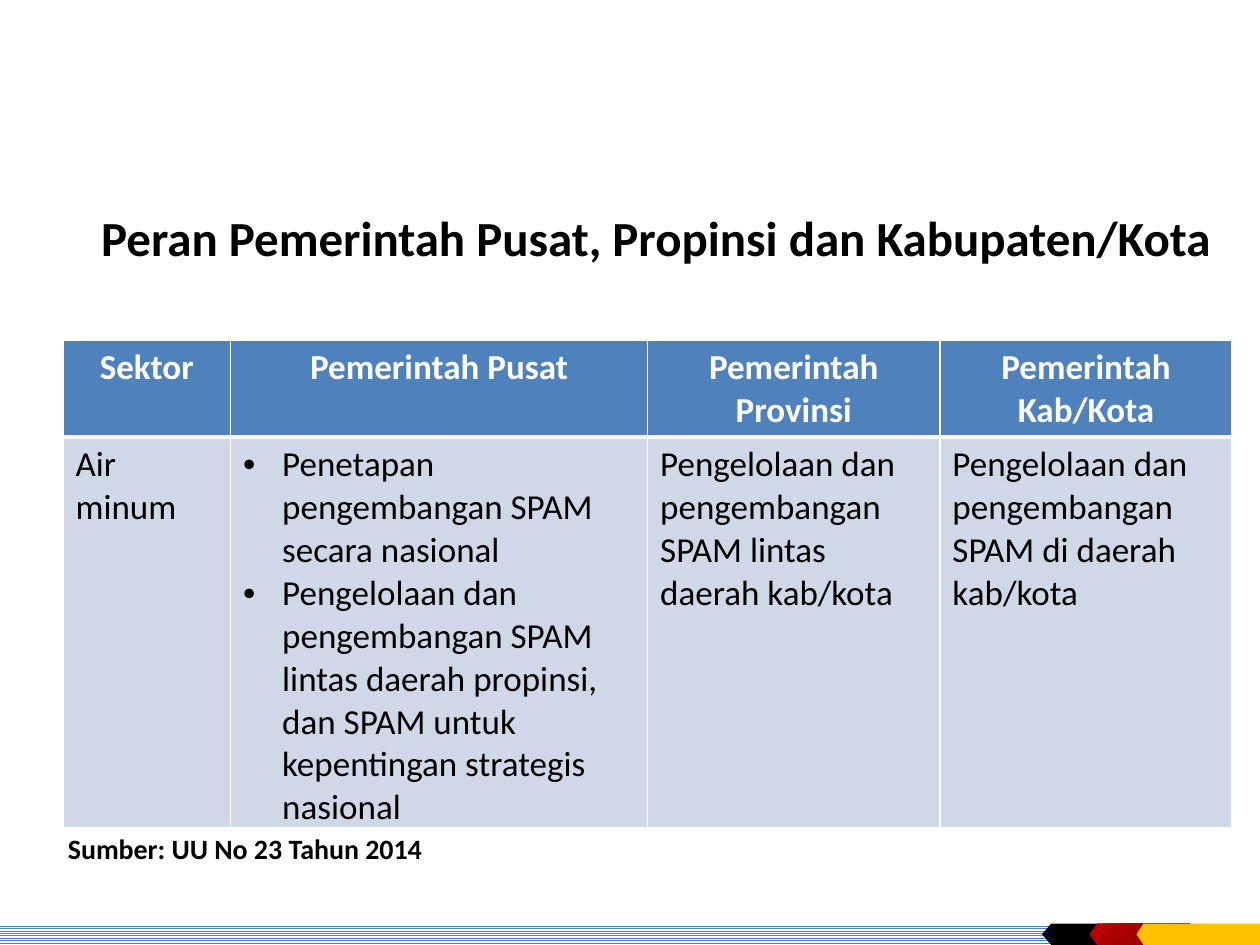
"""Build a slide on the roles of central, provincial and local government."""
import pptx
import pptx.dml.color
import pptx.enum.dml
import pptx.enum.shapes
import pptx.enum.text
import pptx.oxml
import pptx.oxml.ns
import pptx.util

Inches = pptx.util.Inches
Align = pptx.enum.text.PP_ALIGN
Anchor = pptx.enum.text.MSO_ANCHOR
Shape = pptx.enum.shapes.MSO_SHAPE

HEADS = ["Sektor", "Pemerintah Pusat", "Pemerintah Provinsi", "Pemerintah Kab/Kota"]
ROLES = [
    ["Air minum"],
    [
        "Penetapan pengembangan SPAM secara nasional",
        "Pengelolaan dan pengembangan SPAM lintas daerah propinsi, "
        "dan SPAM untuk kepentingan strategis nasional",
    ],
    ["Pengelolaan dan pengembangan SPAM lintas daerah kab/kota"],
    ["Pengelolaan dan pengembangan SPAM di daerah kab/kota"],
]
WIDTHS = [1.33, 3.31, 2.32, 2.32]
HEIGHTS = [0.77, 3.1]
ARROWS = [
    (8.27, 0.95, 0.43, ["000000"]),
    (8.65, 0.79, 0.36, ["720000", "A20000", "C00000"]),
    (9.02, 0.98, 0.33, ["FFC000"]),
]


def color(code):
    return pptx.dml.color.RGBColor.from_string(code)


def make(tag, body="", **attrs):
    """Make a DrawingML element."""
    pairs = "".join(f' {key}="{value}"' for key, value in attrs.items())
    space = pptx.oxml.ns.nsdecls("a")
    return pptx.oxml.parse_xml(f"<a:{tag} {space}{pairs}>{body}</a:{tag}>")


def style(para, size, code="000000", bold=False, align=Align.LEFT):
    para.alignment = align
    font = para.font
    font.name, font.size, font.bold = "Calibri", pptx.util.Pt(size), bold
    font.color.rgb = color(code)


def add_shape(slide, kind, left, width, height):
    """Add a bare shape to the footer."""
    shape = slide.shapes.add_shape(
        kind, Inches(left), Inches(7.33), Inches(width), Inches(height))
    shape.shadow.inherit = False
    shape.line.fill.background()
    return shape


def add_stripes(slide):
    fill = add_shape(slide, Shape.RECTANGLE, 0, 8.38, 0.16).fill
    fill.patterned()
    fill.pattern = pptx.enum.dml.MSO_PATTERN.LIGHT_HORIZONTAL
    fill.fore_color.rgb = color("4F81BD")
    fill.back_color.rgb = color("FFFFFF")


def add_arrow(slide, left, width, point, codes):
    """Add an arrow that points left, plain or with a radial gradient."""
    shape = add_shape(slide, Shape.PENTAGON, left, width, 0.17)
    shape.adjustments[0] = point
    props = shape.element.spPr
    props.xfrm.set("flipH", "1")
    shape.fill.solid()
    shape.fill.fore_color.rgb = color(codes[0])
    if len(codes) > 1:
        step = 100000 // (len(codes) - 1)
        stops = "".join(
            f'<a:gs pos="{i * step}"><a:srgbClr val="{code}"/></a:gs>'
            for i, code in enumerate(codes))
        grad = make("gradFill", f"<a:gsLst>{stops}</a:gsLst>"
                    '<a:path path="circle"><a:fillToRect l="100000" t="100000"/></a:path>')
        props.replace(props.find(pptx.oxml.ns.qn("a:solidFill")), grad)


def add_text(slide, text, left, top, width, height, size, **look):
    """Add a text box with one bold line."""
    box = slide.shapes.add_textbox(
        Inches(left), Inches(top), Inches(width), Inches(height))
    para = box.text_frame.paragraphs[0]
    para.text = text
    style(para, size, bold=True, **look)
    return box.text_frame


def fill_cell(cell, lines, back, edges, **look):
    """Fill a cell with text, white edges and bullets for many lines."""
    props = cell._tc.get_or_add_tcPr()
    for side, width in zip("LRTB", edges):
        props.append(make(
            f"ln{side}", '<a:solidFill><a:srgbClr val="FFFFFF"/></a:solidFill>',
            w=pptx.util.Pt(width)))
    cell.fill.solid()
    cell.fill.fore_color.rgb = color(back)
    cell.text = "\n".join(lines)
    for para in cell.text_frame.paragraphs:
        if len(lines) > 1:
            props = para._p.get_or_add_pPr()
            props.set("marL", str(Inches(0.31)))
            props.set("indent", str(Inches(-0.31)))
            props.append(make("buFont", typeface="Arial"))
            props.append(make("buChar", char="•"))
        style(para, 20, **look)


def add_table(slide):
    """Add the table of sectors and roles."""
    table = slide.shapes.add_table(
        len(HEIGHTS), len(WIDTHS), Inches(0.5), Inches(2.7),
        Inches(sum(WIDTHS)), Inches(sum(HEIGHTS))).table
    for row, height in zip(table.rows, HEIGHTS):
        row.height = Inches(height)
    for i, (width, head, role) in enumerate(zip(WIDTHS, HEADS, ROLES)):
        table.columns[i].width = Inches(width)
        fill_cell(table.cell(0, i), [head], "4F81BD", (1, 1, 1, 3),
                  code="FFFFFF", bold=True, align=Align.CENTER)
        fill_cell(table.cell(1, i), role, "D0D8E8", (1, 1, 3, 1))


def main():
    deck = pptx.Presentation()
    deck.slide_width, deck.slide_height = Inches(10), Inches(7.5)
    slide = deck.slides.add_slide(deck.slide_layouts[6])
    add_stripes(slide)
    for arrow in ARROWS:
        add_arrow(slide, *arrow)
    title = add_text(slide, "Peran Pemerintah Pusat, Propinsi dan Kabupaten/Kota",
                     0.31, 1.49, 9.79, 0.78, 28, align=Align.CENTER)
    title.word_wrap = True
    title.vertical_anchor = Anchor.MIDDLE
    add_table(slide)
    source = add_text(slide, "Sumber: UU No 23 Tahun 2014", 0.44, 6.55, 3.05, 0.37, 16)
    source.word_wrap = False
    source.auto_size = pptx.enum.text.MSO_AUTO_SIZE.SHAPE_TO_FIT_TEXT
    deck.save("out.pptx")


if __name__ == "__main__":
    main()
